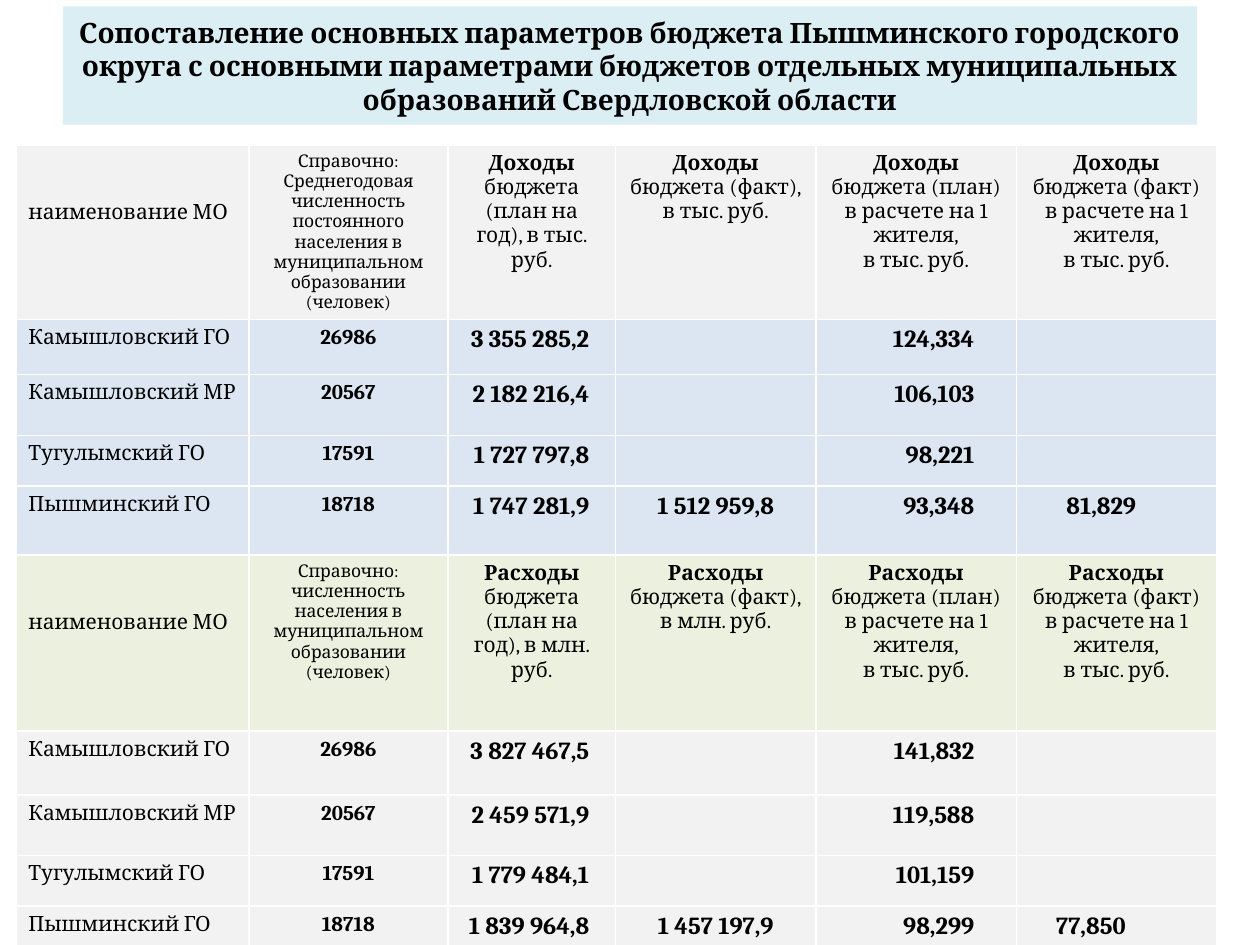
import pptx
import pptx.util
import pptx.dml.color
import pptx.enum.text

Pt = pptx.util.Pt
RGBColor = pptx.dml.color.RGBColor
ALIGN = pptx.enum.text.PP_ALIGN
ANCHOR = pptx.enum.text.MSO_ANCHOR

FONT = "Cambria"
BLACK = RGBColor(0x00, 0x00, 0x00)
TITLE_FILL = RGBColor(0xDB, 0xEE, 0xF4)
GRAY = RGBColor(0xF2, 0xF2, 0xF2)
BLUE = RGBColor(0xDC, 0xE6, 0xF2)
GREEN = RGBColor(0xEB, 0xF1, 0xDE)

TITLE = (
    "Сопоставление основных параметров бюджета Пышминского городского округа "
    "с основными параметрами бюджетов отдельных муниципальных образований "
    "Свердловской области"
)
COLUMN_WIDTHS = [133.2, 113.8, 95.8, 114.5, 114.5, 114.5]
ROW_HEIGHTS = [98.8, 31.5, 34.8, 29, 39.5, 100.5, 36.5, 34.5, 29, 36]
MUNICIPALITIES = [
    ("Камышловский ГО", "26986"),
    ("Камышловский МР", "20567"),
    ("Тугулымский ГО", "17591"),
    ("Пышминский ГО", "18718"),
]
SECTIONS = [
    {
        "subject": "Доходы",
        "unit": "в тыс. руб.",
        "population": "Среднегодовая численность постоянного населения в муниципальном образовании (человек)",
        "header_fill": GRAY,
        "body_fill": BLUE,
        "fact_margin": 46,
        "values": [
            ("3 355 285,2", "", "124,334", ""),
            ("2 182 216,4", "", "106,103", ""),
            ("1 727 797,8", "", "98,221", ""),
            ("1 747 281,9", "1 512 959,8", "93,348", "81,829"),
        ],
    },
    {
        "subject": "Расходы",
        "unit": "в млн. руб.",
        "population": "численность населения в муниципальном образовании (человек)",
        "header_fill": GREEN,
        "body_fill": GRAY,
        "fact_margin": 52,
        "values": [
            ("3 827 467,5", "", "141,832", ""),
            ("2 459 571,9", "", "119,588", ""),
            ("1 779 484,1", "", "101,159", ""),
            ("1 839 964,8", "1 457 197,9", "98,299", "77,850"),
        ],
    },
]


def format_paragraph(paragraph, size, bold, alignment):
    """Set the font and alignment of a whole paragraph."""
    paragraph.alignment = alignment
    paragraph.font.name = FONT
    paragraph.font.size = Pt(size)
    paragraph.font.color.rgb = BLACK
    if bold is not None:
        paragraph.font.bold = bold


def fill_cell(cell, color, lines, size=12, bold=False, alignment=ALIGN.CENTER):
    """Colour a cell and write one paragraph per line."""
    cell.fill.solid()
    cell.fill.fore_color.rgb = color
    cell.text = "\n".join(lines)
    for paragraph in cell.text_frame.paragraphs:
        format_paragraph(paragraph, size, bold, alignment)


def fill_budget_header(cell, color, subject, lines):
    """Write a header cell that opens with its subject in bold."""
    fill_cell(cell, color, lines, bold=None)
    first, *others = cell.text_frame.paragraphs
    text = first.runs[0].text
    first.runs[0].text = subject
    first.runs[0].font.bold = True
    first.add_run().text = " " + text
    first.runs[1].font.bold = False
    for paragraph in others:
        paragraph.font.bold = False


def fill_header(cells, section):
    """Write the header row of a section."""
    color, subject, unit = section["header_fill"], section["subject"], section["unit"]
    per_resident = ["в расчете на 1 жителя,", "в тыс. руб."]
    fill_cell(cells[0], color, ["наименование МО"], alignment=ALIGN.LEFT)
    cells[0].margin_top = Pt(31.5)
    fill_cell(cells[1], color, ["Справочно:", section["population"]], size=10)
    headings = [
        [f"бюджета (план на год), {unit}"],
        ["бюджета (факт),", unit],
        ["бюджета (план)"] + per_resident,
        ["бюджета (факт)"] + per_resident,
    ]
    for cell, lines in zip(cells[2:], headings):
        fill_budget_header(cell, color, subject, lines)


def fill_body(cells, section, municipality, values):
    """Write one municipality's row."""
    color = section["body_fill"]
    name, population = municipality
    fill_cell(cells[0], color, [name], alignment=ALIGN.LEFT)
    fill_cell(cells[1], color, [population], bold=True)
    right_margins = [15, None, 24, section["fact_margin"]]
    for cell, value, margin in zip(cells[2:], values, right_margins):
        alignment = ALIGN.RIGHT if margin else ALIGN.CENTER
        fill_cell(cell, color, [value], size=14, bold=True, alignment=alignment)
        if margin:
            cell.margin_right = Pt(margin)


def add_budget_table(slide):
    """Add the table of both budget sections."""
    table = slide.shapes.add_table(
        len(ROW_HEIGHTS), len(COLUMN_WIDTHS), Pt(9), Pt(83),
        Pt(sum(COLUMN_WIDTHS)), Pt(sum(ROW_HEIGHTS)),
    ).table
    table.horz_banding = False
    for column, width in zip(table.columns, COLUMN_WIDTHS):
        column.width = Pt(width)
    for row, height in zip(table.rows, ROW_HEIGHTS):
        row.height = Pt(height)
    rows = iter(table.rows)
    for section in SECTIONS:
        fill_header(list(next(rows).cells), section)
        for municipality, values in zip(MUNICIPALITIES, section["values"]):
            fill_body(list(next(rows).cells), section, municipality, values)


def format_title(slide):
    """Place, colour and write the slide title."""
    title = slide.shapes.title
    title.left, title.top, title.width, title.height = Pt(36), Pt(3.6), Pt(648), Pt(67.7)
    title.fill.solid()
    title.fill.fore_color.rgb = TITLE_FILL
    title.text_frame.text = TITLE
    title.text_frame.vertical_anchor = ANCHOR.MIDDLE
    format_paragraph(title.text_frame.paragraphs[0], 16, True, ALIGN.CENTER)


def main():
    """Build and save the presentation."""
    presentation = pptx.Presentation()
    presentation.slide_width, presentation.slide_height = Pt(720), Pt(540)
    slide = presentation.slides.add_slide(presentation.slide_layouts[5])
    format_title(slide)
    add_budget_table(slide)
    presentation.save("out.pptx")


if __name__ == "__main__":
    main()
